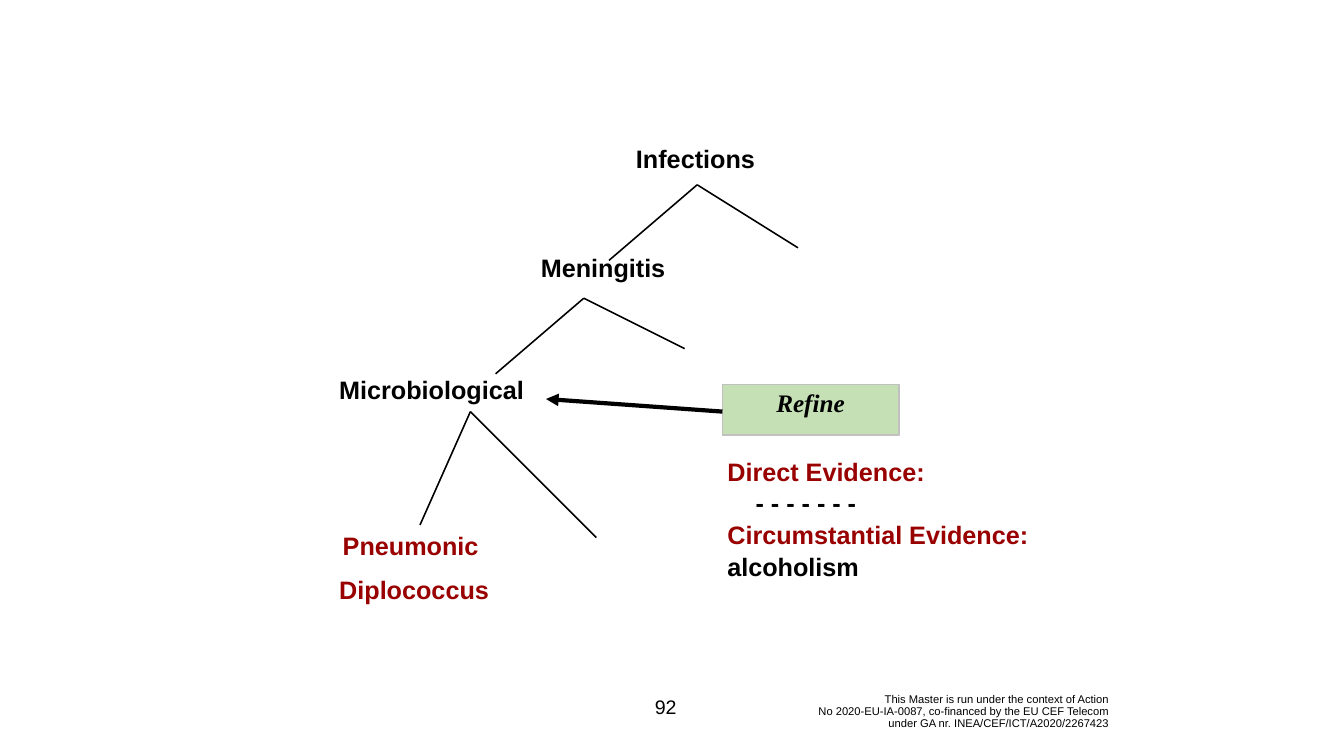
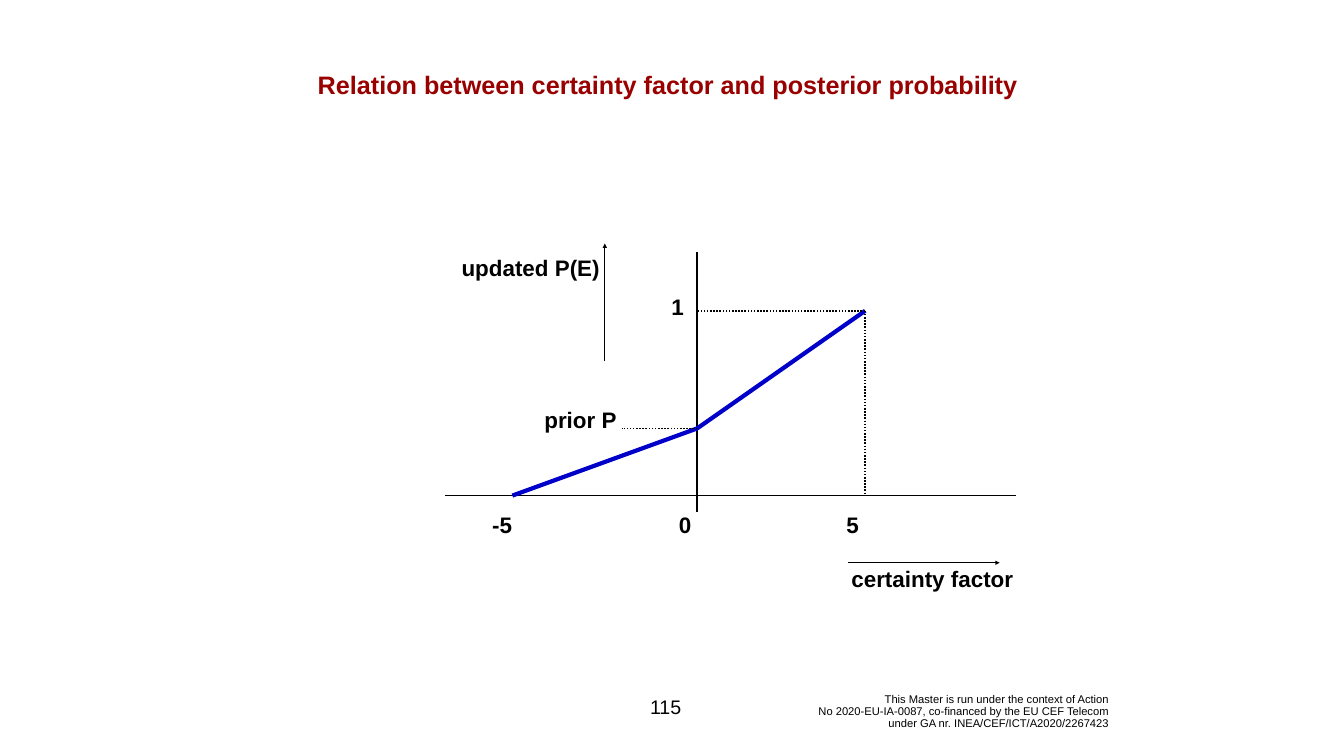
from dataclasses import dataclass

from lxml.etree import SubElement
from pptx import Presentation
from pptx.dml.color import RGBColor
from pptx.enum.dml import MSO_LINE_DASH_STYLE as Dash
from pptx.enum.shapes import MSO_CONNECTOR as Connector, MSO_SHAPE as Shape
from pptx.enum.text import MSO_ANCHOR as Anchor, PP_ALIGN as Align
from pptx.oxml.ns import qn
from pptx.util import Emu, Inches, Pt


@dataclass(frozen=True)
class Theme:
    sans: str = "Arial"
    serif: str = "Times New Roman"
    black: str = "000000"
    red: str = "990000"
    blue: str = "0100C8"
    green: str = "C5E0B4"
    gray: str = "C0C0C0"
    heading: int = 36
    label: int = 32
    number: int = 28
    footer: int = 16
    thin: float = 1.5
    regular: float = 2.25
    thick: float = 6


THEME = Theme()
COLUMNS, ROWS = 160, 90
CELL = Inches(1) / 6
HEADING_ROWS, LABEL_ROWS = 4.26, 3.84

FOOTER = "\v".join([
    "This Master is run under the context of Action",
    "No 2020-EU-IA-0087, co-financed by the EU CEF Telecom",
    "under GA nr. INEA/CEF/ICT/A2020/2267423",
])
FOOTER_AREA = (90.1, 82.4, 42.5, 4.6)
NUMBER_AREA = (75.9, 81.7, 6.7, 4.8)

DISEASE_LABELS = [
    ("Infections", (72.3, 16.8, 21)),
    ("Meningitis", (61.3, 29.8, 21)),
    ("Microbiological ", (37.3, 44.3, 29)),
]
DISEASE_FORKS = [
    ((83, 22), [(72.5, 31), (95, 29.5)]),
    ((69.5, 35.5), [(59, 44.5), (81.5, 41.5)]),
    ((56, 49), [(50, 62.5), (71, 64)]),
]
ORGANISM = ["Pneumonic ", "Diplococcus"]
ORGANISM_AREA = (38.3, 62.8, 22, 9.7)
REFINE_AREA = (86, 45.8, 21, 6)
REFINE_ARROW = ((86, 49), (65, 47.5))
EVIDENCE = [
    ("Direct Evidence:", THEME.red, 0),
    ("- - - - - - -", THEME.black, 0.56),
    ("Circumstantial Evidence:", THEME.red, 0),
    ("alcoholism", THEME.black, 0),
]
EVIDENCE_AREA = (86, 53.8, 45, 15.1)

TITLE = "Relation between certainty factor and posterior probability"
TITLE_AREA = (30, 8, 99, HEADING_ROWS)
ORIGIN = (83, 59)
CURVE = [(61, 59), (83, 51), (103, 37)]
AXES = [((53, 59), (121, 59)), ((83, 30), (83, 61))]
GUIDES = [((103, 37), (103, 59)), ((83, 51), (74, 51)), ((103, 37), (83, 37))]
DIRECTIONS = [((72, 43), (72, 29)), ((101, 67), (119, 67))]
TICKS = ["-5", "0", "5"]
TICKS_AREA = (58, 60.6, 48, LABEL_ROWS)
TICK_STOPS = [3.83, 7.15]
GRAPH_LABELS = [
    ("certainty factor", (93, 67, 36), Align.CENTER),
    ("1", (77, 34.6, 5), Align.RIGHT),
    ("updated P(E)", (45, 30, 27), Align.RIGHT),
    ("prior P", (44, 48, 30), Align.RIGHT),
]


def grid(*cells):
    return [Emu(round(cell * CELL)) for cell in cells]


def style(paragraph, size, color=THEME.black, bold=True, align=Align.LEFT,
          name=THEME.sans, italic=False):
    paragraph.alignment = align
    font = paragraph.font
    font.name, font.size, font.bold, font.italic = name, Pt(size), bold, italic
    font.color.rgb = RGBColor.from_string(color)


def text_frame(slide, area, anchor=Anchor.TOP):
    frame = slide.shapes.add_textbox(*grid(*area)).text_frame
    frame.word_wrap = True
    frame.vertical_anchor = anchor
    return frame


def add_paragraphs(frame, texts):
    frame.text = "\n".join(texts)
    return frame.paragraphs


def add_label(slide, text, area, size, anchor=Anchor.TOP, **look):
    paragraph = add_paragraphs(text_frame(slide, area, anchor), [text])[0]
    style(paragraph, size, **look)
    return paragraph


def add_line(slide, start, end, width=THEME.regular, color=THEME.black,
             dash=None, arrow=False):
    connector = slide.shapes.add_connector(Connector.STRAIGHT, *grid(*start, *end))
    line = connector.line
    line.width = Pt(width)
    line.color.rgb = RGBColor.from_string(color)
    if dash:
        line.dash_style = dash
    properties = connector._element.spPr
    if arrow:
        SubElement(properties.find(qn("a:ln")), qn("a:tailEnd"), type="triangle")
    SubElement(properties, qn("a:effectLst"))


def add_slide(presentation, number):
    slide = presentation.slides.add_slide(presentation.slide_layouts[6])
    footer = add_label(slide, FOOTER, FOOTER_AREA, THEME.footer, Anchor.MIDDLE,
                       bold=False, align=Align.RIGHT)
    footer.line_spacing = 0.9
    add_label(slide, str(number), NUMBER_AREA, THEME.number, Anchor.MIDDLE,
              bold=False, align=Align.CENTER)
    return slide


def add_refine_box(slide):
    box = slide.shapes.add_shape(Shape.RECTANGLE, *grid(*REFINE_AREA))
    box.shadow.inherit = False
    box.fill.solid()
    box.fill.fore_color.rgb = RGBColor.from_string(THEME.green)
    box.line.color.rgb = RGBColor.from_string(THEME.gray)
    box.line.width = Pt(THEME.regular)
    frame = box.text_frame
    frame.vertical_anchor = Anchor.TOP
    style(add_paragraphs(frame, ["Refine"])[0], THEME.heading,
          align=Align.CENTER, name=THEME.serif, italic=True)


def build_disease_tree(presentation):
    slide = add_slide(presentation, 92)
    add_refine_box(slide)
    add_line(slide, *REFINE_ARROW, width=THEME.thick, arrow=True)
    for apex, branches in DISEASE_FORKS:
        for branch in branches:
            add_line(slide, apex, branch)
    for text, area in DISEASE_LABELS:
        add_label(slide, text, (*area, HEADING_ROWS), THEME.heading, align=Align.CENTER)
    organism = add_paragraphs(text_frame(slide, ORGANISM_AREA), ORGANISM)
    for paragraph in organism:
        style(paragraph, THEME.heading, THEME.red, align=Align.CENTER)
    organism[1].space_before = Pt(20)
    evidence = add_paragraphs(text_frame(slide, EVIDENCE_AREA),
                              [text for text, _, _ in EVIDENCE])
    for paragraph, (_, color, indent) in zip(evidence, EVIDENCE):
        paragraph.line_spacing = 1.05
        if indent:
            paragraph._p.get_or_add_pPr().set("marL", str(Inches(indent)))
        style(paragraph, THEME.heading, color)


def add_ticks(slide):
    paragraph = add_paragraphs(text_frame(slide, TICKS_AREA), ["\t".join(TICKS)])[0]
    stops = SubElement(paragraph._p.get_or_add_pPr(), qn("a:tabLst"))
    for stop in TICK_STOPS:
        SubElement(stops, qn("a:tab"), pos=str(Inches(stop)), algn="ctr")
    style(paragraph, THEME.label)


def build_certainty_graph(presentation):
    slide = add_slide(presentation, 115)
    add_label(slide, TITLE, TITLE_AREA, THEME.heading, color=THEME.red, align=Align.CENTER)
    for axis in AXES:
        add_line(slide, *axis)
    for start, end in zip(CURVE, CURVE[1:]):
        add_line(slide, start, end, THEME.thick, THEME.blue)
    for guide in GUIDES:
        add_line(slide, *guide, dash=Dash.ROUND_DOT)
    for direction in DIRECTIONS:
        add_line(slide, *direction, width=THEME.thin, arrow=True)
    add_ticks(slide)
    for text, area, align in GRAPH_LABELS:
        add_label(slide, text, (*area, LABEL_ROWS), THEME.label, align=align)


def main():
    presentation = Presentation()
    presentation.slide_width, presentation.slide_height = grid(COLUMNS, ROWS)
    build_disease_tree(presentation)
    build_certainty_graph(presentation)
    presentation.save("out.pptx")


if __name__ == "__main__":
    main()
